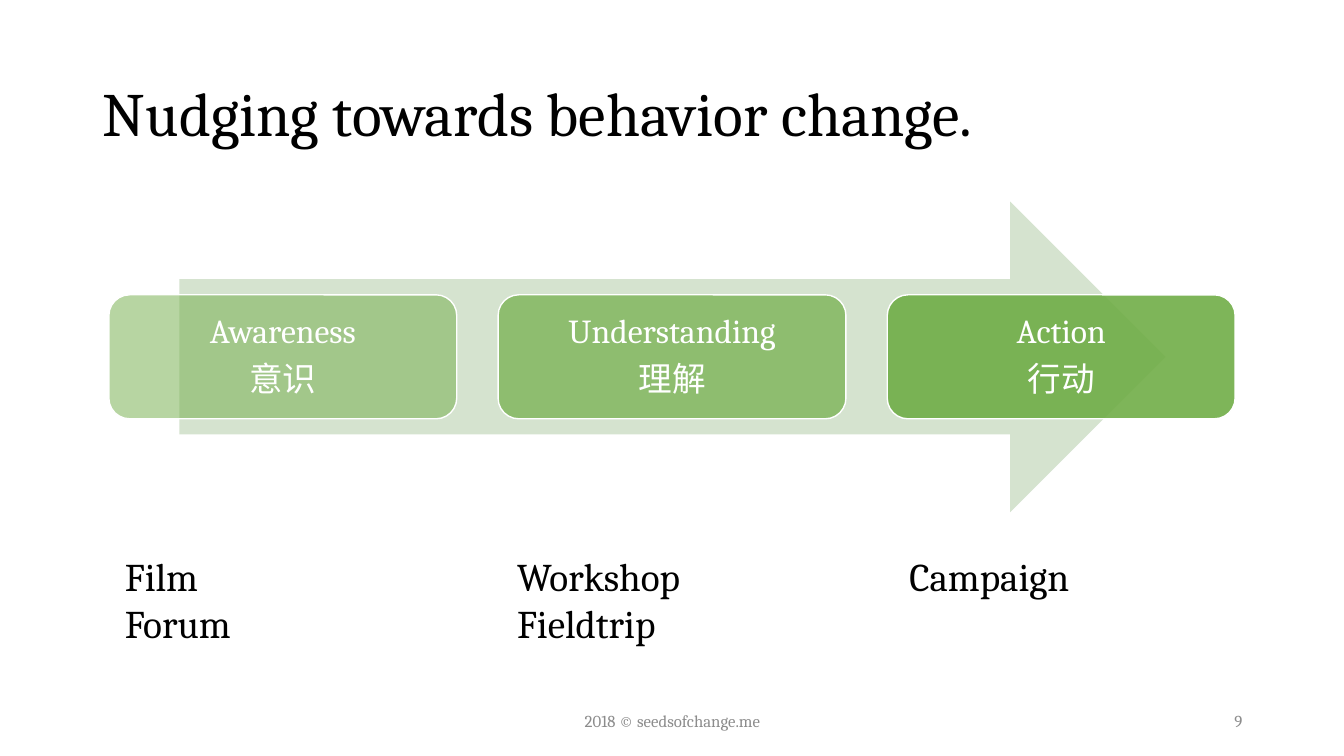
from pptx import Presentation
from pptx import util as u
from pptx.dml.color import RGBColor
from pptx.enum import shapes, text
from pptx.oxml.ns import qn
from lxml import etree

# Content
TITLE = "Nudging towards behavior change."
STAGES = [  # stage lines, opacity in percent, activities
    (["Awareness", "意识"], 50, ["Film", "Forum"]),
    (["Understanding", "理解"], 70, ["Workshop", "Fieldtrip"]),
    (["Action", "行动"], 90, ["Campaign"]),
]
FOOTER = "2018 © seedsofchange.me"
PAGE = "9"

FONT = "Cambria"
BLACK = RGBColor(0x00, 0x00, 0x00)
WHITE = RGBColor(0xFF, 0xFF, 0xFF)
GREEN = RGBColor(0x70, 0xAD, 0x47)
PALE = RGBColor(0xD5, 0xE3, 0xCF)
GREY = RGBColor(0x8C, 0x8C, 0x8C)

# Grid in inches
STAGE_LEFT, STAGE_PITCH, STAGE_W, STAGE_H = 1.08, 3.86, 3.45, 1.23
LABEL_LEFT, LABEL_PITCH, LABEL_TOP, LABEL_W, LINE_H = 1.14, 3.89, 5.43, 2.96, 0.47
ARROW = (1.78, 2, 9.78, 3.08)
STAGE_TOP = ARROW[1] + (ARROW[3] - STAGE_H) / 2
FOOT_TOP, FOOT_H = 6.95, 0.4


def inches(*box):
    return [u.Inches(v) for v in box]


def write(tf, lines, size, color, align, anchor, spacing=1.0, after=0):
    tf.word_wrap = True
    tf.vertical_anchor = anchor
    for i, line in enumerate(lines):
        p = tf.paragraphs[0] if i == 0 else tf.add_paragraph()
        p.text = line
        p.alignment = align
        p.line_spacing = spacing
        p.space_after = u.Pt(after)
        p.font.name, p.font.size = FONT, u.Pt(size)
        p.font.color.rgb = color


def add_block(kind, box, fill):
    sp = s.shapes.add_shape(kind, *inches(*box))
    sp.shadow.inherit = False
    sp.fill.solid()
    sp.fill.fore_color.rgb = fill
    return sp


def add_text(box, *args):
    write(s.shapes.add_textbox(*inches(*box)).text_frame, *args)


prs = Presentation()
prs.slide_width, prs.slide_height = inches(13.33, 7.5)
s = prs.slides.add_slide(prs.slide_layouts[5])
LEFT, CENTER, RIGHT = text.PP_ALIGN.LEFT, text.PP_ALIGN.CENTER, text.PP_ALIGN.RIGHT
TOP, MIDDLE = text.MSO_ANCHOR.TOP, text.MSO_ANCHOR.MIDDLE

# Title
title = s.shapes.title
title.left, title.top, title.width, title.height = inches(0.92, 0.78, 11.5, 1.45)
write(title.text_frame, [TITLE], 44, BLACK, LEFT, TOP, 0.9)

# Arrow behind the stages
add_block(shapes.MSO_SHAPE.RIGHT_ARROW, ARROW, PALE).line.fill.background()

# Stages, increasingly opaque, with their activities below
for i, (names, opacity, activities) in enumerate(STAGES):
    box = (STAGE_LEFT + i * STAGE_PITCH, STAGE_TOP, STAGE_W, STAGE_H)
    sp = add_block(shapes.MSO_SHAPE.ROUNDED_RECTANGLE, box, GREEN)
    color = sp.fill._xPr.find(qn("a:solidFill"))[0]
    etree.SubElement(color, qn("a:alpha")).set("val", str(opacity * 1000))
    sp.line.color.rgb = WHITE
    sp.line.width = u.Pt(1)
    write(sp.text_frame, names, 24, WHITE, CENTER, MIDDLE, 0.9, 8.4)

    label = (LABEL_LEFT + i * LABEL_PITCH, LABEL_TOP, LABEL_W, 0.1 + LINE_H * len(activities))
    add_text(label, activities, 28, BLACK, LEFT, TOP)

# Footer and page number
add_text((4.42, FOOT_TOP, 4.5, FOOT_H), [FOOTER], 12, GREY, CENTER, MIDDLE)
add_text((9.42, FOOT_TOP, 3, FOOT_H), [PAGE], 12, GREY, RIGHT, MIDDLE)

prs.save("out.pptx")
